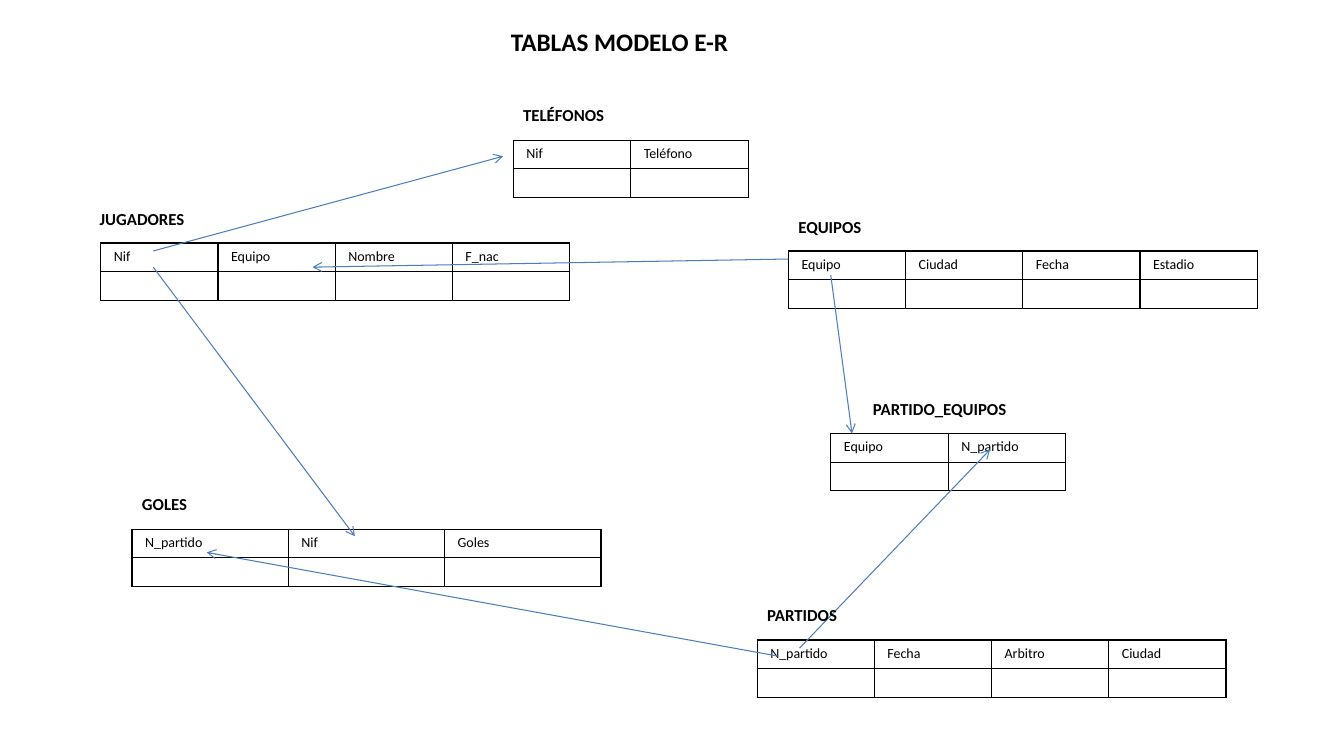
from lxml import etree
from pptx import Presentation
from pptx.dml.color import RGBColor
from pptx.enum.shapes import MSO_CONNECTOR
from pptx.enum.text import MSO_ANCHOR, MSO_AUTO_SIZE, PP_ALIGN
from pptx.oxml.ns import qn
from pptx.util import Pt

STRAIGHT = MSO_CONNECTOR.STRAIGHT
TOP = MSO_ANCHOR.TOP
NO_FIT = MSO_AUTO_SIZE.NONE
LEFT, CENTER = PP_ALIGN.LEFT, PP_ALIGN.CENTER

PX = 9144
FONT = "Calibri"
COLORS = {"text": "000000", "border": "000000", "relation": "4B7EBC"}
TITLE_ONLY = 5
HEADER_SIZE = 10
TABLE_HEIGHT = 57

ENTITIES = [
    (100, 241, 465, ["Nif", "Equipo", "Nombre", "F_nac"]),
    (782, 249, 465, ["Equipo", "Ciudad", "Fecha", "Estadio"]),
    (751, 635, 465, ["N_partido", "Fecha", "Arbitro", "Ciudad"]),
    (824, 430, 233, ["Equipo", "N_partido"]),
    (131, 525, 465, ["N_partido", "Nif", "Goles"]),
    (509, 139, 233, ["Nif", "Teléfono"]),
]

RELATIONS = [
    ((824, 273), (845, 430)),
    ((793, 643), (982, 446)),
    ((772, 651), (205, 548)),
    ((152, 265), (352, 532)),
    ((152, 249), (499, 155)),
    ((782, 257), (310, 265)),
]

CAPTIONS = [
    ("JUGADORES", 89, 202, 168),
    ("TELÉFONOS", 509, 99, 168),
    ("EQUIPOS", 782, 210, 168),
    ("PARTIDOS", 751, 595, 168),
    ("PARTIDO_EQUIPOS", 856, 391, 210),
    ("GOLES", 131, 485, 168),
]


def px(*lengths):
    return [round(length * PX) for length in lengths]


def write(frame, text, size=12, bold=False, align=LEFT, color="text"):
    paragraph = frame.paragraphs[0]
    paragraph.alignment = align
    run = paragraph.add_run()
    run.text = text
    run.font.name = FONT
    run.font.size = Pt(size)
    run.font.bold = bold
    run.font.color.rgb = RGBColor.from_string(COLORS[color])


def add_title(slide, text):
    title = slide.shapes.title
    title.left, title.top, title.width, title.height = px(457, 21, 315, 40)
    title.text_frame.vertical_anchor = TOP
    title.text_frame.auto_size = NO_FIT
    write(title.text_frame, text, size=18, bold=True, align=CENTER)


def add_caption(slide, text, left, top, width):
    caption = slide.shapes.add_textbox(*px(left, top, width, 30))
    caption.text_frame.word_wrap = True
    write(caption.text_frame, text, bold=True)


def add_borders(cell):
    properties = cell._tc.get_or_add_tcPr()
    for side in ("a:lnL", "a:lnR", "a:lnT", "a:lnB"):
        border = etree.SubElement(properties, qn(side), w=str(Pt(1)))
        fill = etree.SubElement(border, qn("a:solidFill"))
        etree.SubElement(fill, qn("a:srgbClr"), val=COLORS["border"])


def format_cell(cell):
    cell.margin_left, cell.margin_right = px(13, 13)
    cell.margin_top, cell.margin_bottom = px(5, 5)
    add_borders(cell)
    cell.fill.background()


def add_entity(slide, left, top, width, fields):
    box = px(left, top, width, TABLE_HEIGHT)
    table = slide.shapes.add_table(2, len(fields), *box).table
    table.first_row = False
    table.horz_banding = False
    for column in table.columns:
        column.width = round(width * PX / len(fields))
    for row in table.rows:
        row.height = round(TABLE_HEIGHT * PX / 2)
    for cell in table.iter_cells():
        format_cell(cell)
    for index, field in enumerate(fields):
        write(table.cell(0, index).text_frame, field, size=HEADER_SIZE)
        blank = table.cell(1, index).text_frame.paragraphs[0]
        etree.SubElement(blank._p, qn("a:endParaRPr"), sz=str(HEADER_SIZE * 100))


def add_relation(slide, start, end):
    relation = slide.shapes.add_connector(STRAIGHT, *px(*start, *end))
    relation.line.color.rgb = RGBColor.from_string(COLORS["relation"])
    relation.line.width = Pt(0.75)
    etree.SubElement(relation.line._get_or_add_ln(), qn("a:tailEnd"), type="arrow")
    etree.SubElement(relation._element.spPr, qn("a:effectLst"))


def main():
    deck = Presentation()
    deck.slide_width, deck.slide_height = px(1333, 750)
    slide = deck.slides.add_slide(deck.slide_layouts[TITLE_ONLY])
    add_title(slide, "TABLAS MODELO E-R")
    for entity in ENTITIES:
        add_entity(slide, *entity)
    for relation in RELATIONS:
        add_relation(slide, *relation)
    for caption in CAPTIONS:
        add_caption(slide, *caption)
    deck.save("out.pptx")


if __name__ == "__main__":
    main()
